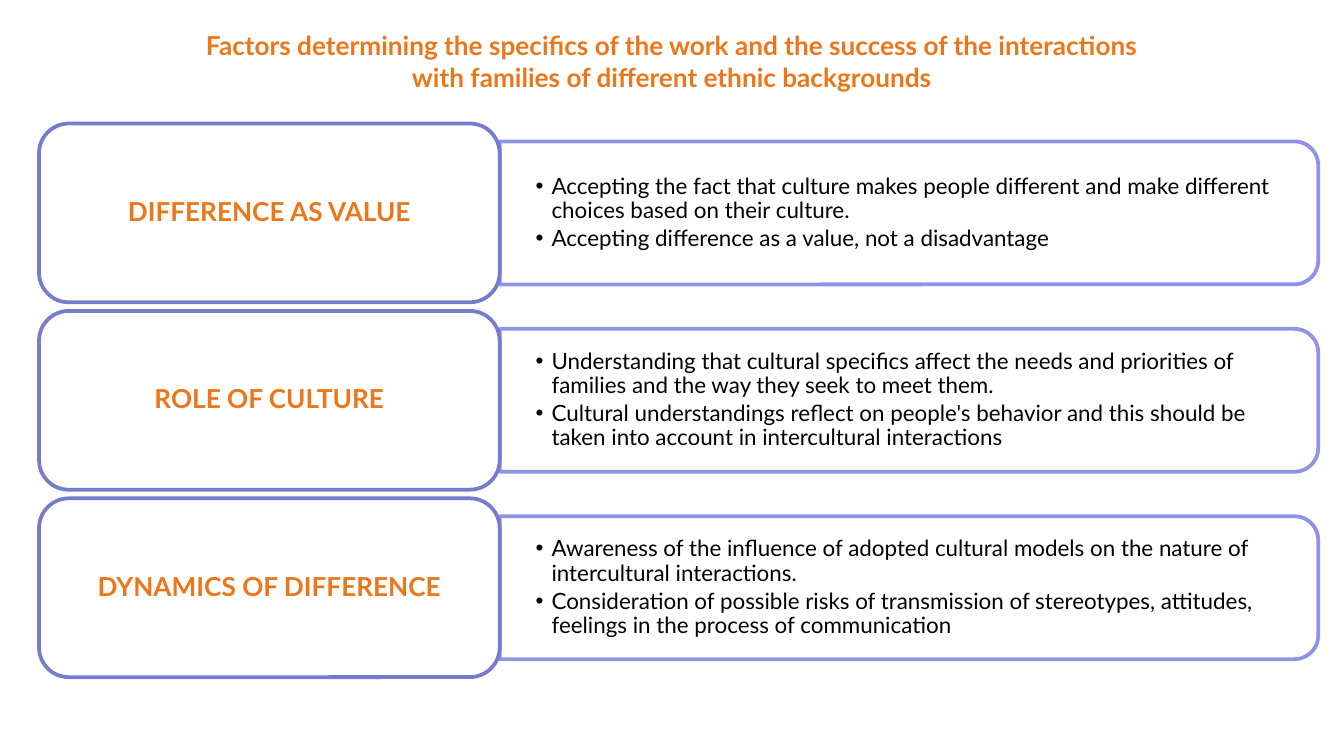
from lxml import etree
from pptx import Presentation
from pptx.dml.color import RGBColor
from pptx.enum.shapes import MSO_SHAPE
from pptx.enum.text import MSO_ANCHOR, MSO_AUTO_SIZE, PP_ALIGN
from pptx.oxml.ns import qn
from pptx.util import Pt

ROUND = MSO_SHAPE.ROUNDED_RECTANGLE
HALF_ROUND = MSO_SHAPE.ROUND_2_SAME_RECTANGLE
MIDDLE = MSO_ANCHOR.MIDDLE
CENTER, LEFT = PP_ALIGN.CENTER, PP_ALIGN.LEFT
NO_FIT = MSO_AUTO_SIZE.NONE

FONT = "Lato"
COLORS = {
    "accent": "EC771B",
    "text": "000000",
    "fill": "FFFFFF",
    "label": "777BCE",
    "panel": "8388E3",
}

TITLE = [
    "Factors determining the specifics of the work and the success of the interactions",
    "with families of different ethnic backgrounds",
]
ROWS = [
    ("DIFFERENCE AS VALUE", [
        "Accepting the fact that culture makes people different and make different "
        "choices based on their culture.",
        "Accepting difference as a value, not a disadvantage",
    ]),
    ("ROLE OF CULTURE", [
        "Understanding that cultural specifics affect the needs and priorities of "
        "families and the way they seek to meet them.",
        "Cultural understandings reflect on people's behavior and this should be "
        "taken into account in intercultural interactions",
    ]),
    ("DYNAMICS OF DIFFERENCE", [
        "Awareness of the influence of adopted cultural models on the nature of "
        "intercultural interactions.",
        "Consideration of possible risks of transmission of stereotypes, attitudes, "
        "feelings in the process of communication",
    ]),
]

TOP, STEP = 66.2, 100.4
LABEL_X, LABEL_W, LABEL_H = 20.9, 246.8, 95.8
PANEL_X = LABEL_X + LABEL_W
PANEL_W, PANEL_H = 438.5, 76.6
LIST_W, LIST_H = 434.8, 69


def rgb(name):
    return RGBColor.from_string(COLORS[name])


def set_frame(frame, side, edge):
    frame.word_wrap = True
    frame.auto_size = NO_FIT
    frame.vertical_anchor = MIDDLE
    frame.margin_left = frame.margin_right = Pt(side)
    frame.margin_top = frame.margin_bottom = Pt(edge)


def style(para, size, color, bold, align, pitch):
    para.alignment = align
    para.line_spacing = pitch
    para.space_before = Pt(0)
    for run in para.runs:
        font = run.font
        font.name, font.size, font.bold = FONT, Pt(size), bold
        font.color.rgb = rgb(color)


def add_bullet(para):
    props = para._p.get_or_add_pPr()
    props.set("marL", str(Pt(8.6)))
    props.set("indent", str(Pt(-8.6)))
    tint = etree.SubElement(props, qn("a:buClr"))
    etree.SubElement(tint, qn("a:srgbClr"), val=COLORS["text"])
    etree.SubElement(props, qn("a:buFont"), typeface="Arial")
    etree.SubElement(props, qn("a:buChar"), char="•")


def set_alpha(shape, percent):
    """Make the fill and the line of the shape partly transparent."""
    for color in shape._element.spPr.iter(qn("a:srgbClr")):
        etree.SubElement(color, qn("a:alpha"), val=str(percent * 1000))


def add_box(slide, kind, x, y, width, height, line):
    box = slide.shapes.add_shape(kind, Pt(x), Pt(y), Pt(width), Pt(height))
    box.shadow.inherit = False
    box.fill.solid()
    box.fill.fore_color.rgb = rgb("fill")
    box.line.color.rgb = rgb(line)
    box.line.width = Pt(2)
    return box


def add_title(slide):
    title = slide.shapes.title
    title.left, title.top = Pt(0), Pt(10)
    title.width, title.height = Pt(720), Pt(45.4)
    frame = title.text_frame
    set_frame(frame, 7.2, 3.6)
    frame.text = "\n".join(TITLE)
    for para in frame.paragraphs:
        style(para, 14, "accent", True, CENTER, 1.0)


def add_panel(slide, mid):
    """Add the panel, turned so that its round corners face right."""
    x = PANEL_X + (PANEL_W - PANEL_H) / 2
    y = mid - PANEL_W / 2
    panel = add_box(slide, HALF_ROUND, x, y, PANEL_H, PANEL_W, "panel")
    panel.rotation = 90
    set_alpha(panel, 90)


def add_list(slide, mid, items):
    box = slide.shapes.add_textbox(
        Pt(PANEL_X), Pt(mid - LIST_H / 2), Pt(LIST_W), Pt(LIST_H))
    frame = box.text_frame
    set_frame(frame, 19.2, 9.6)
    frame.text = "\n".join(items)
    for para in frame.paragraphs:
        para.level = 1
        add_bullet(para)
        style(para, 12, "text", False, LEFT, 0.9)
        para.space_after = Pt(2)


def add_label(slide, mid, text):
    label = add_box(slide, ROUND, LABEL_X, mid - LABEL_H / 2,
                    LABEL_W, LABEL_H, "label")
    frame = label.text_frame
    set_frame(frame, 4.2, 2.1)
    frame.text = text
    style(frame.paragraphs[0], 14, "accent", True, CENTER, 0.9)


def main():
    deck = Presentation()
    deck.slide_width, deck.slide_height = Pt(720), Pt(405)
    slide = deck.slides.add_slide(deck.slide_layouts.get_by_name("Title Only"))
    add_title(slide)
    for row, (name, items) in enumerate(ROWS):
        mid = TOP + row * STEP + LABEL_H / 2
        add_panel(slide, mid)
        add_list(slide, mid, items)
        add_label(slide, mid, name)
    deck.save("out.pptx")


if __name__ == "__main__":
    main()
